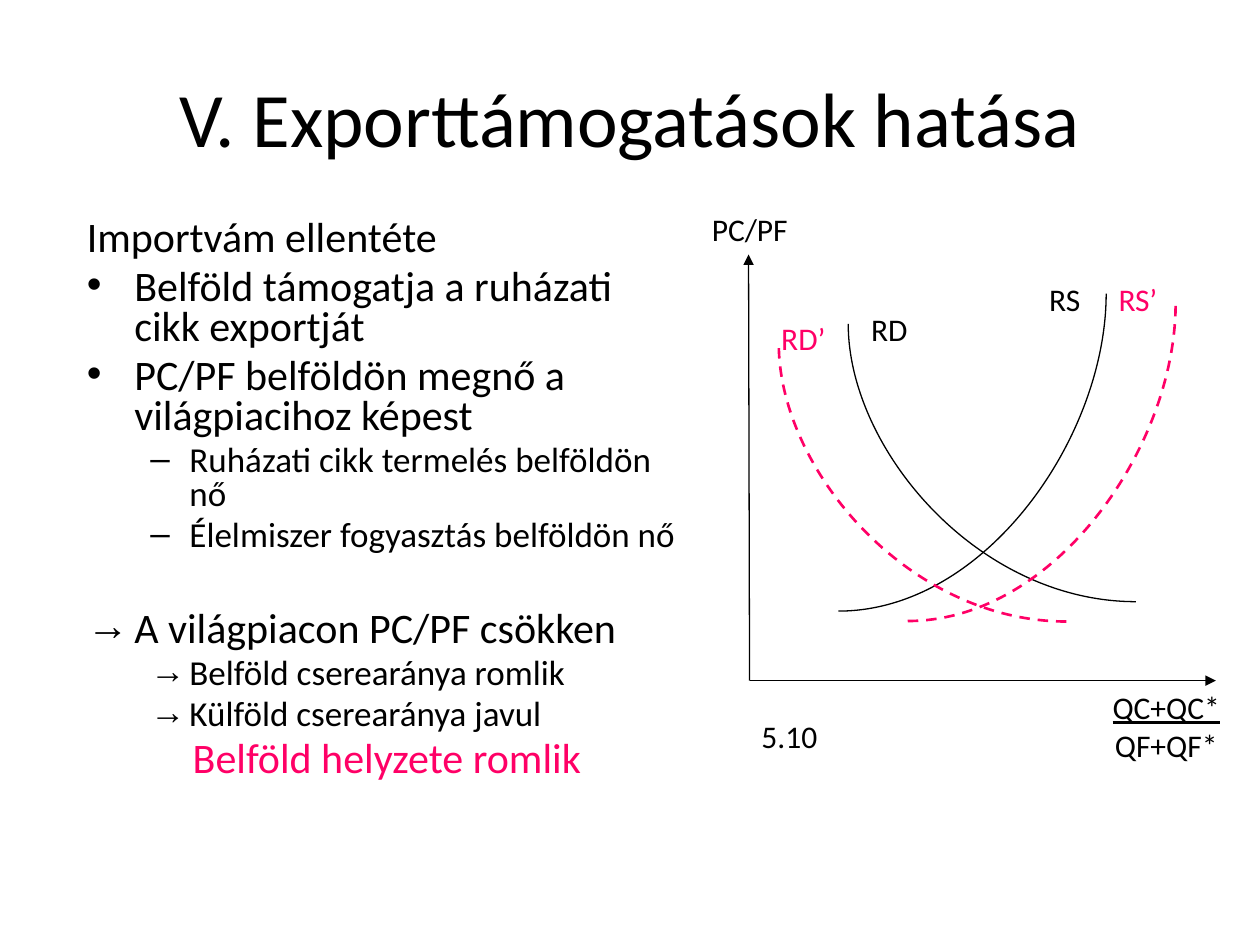
from lxml import etree
from pptx import Presentation
from pptx.dml.color import RGBColor
from pptx.enum.dml import MSO_LINE
from pptx.enum.shapes import MSO_CONNECTOR
from pptx.enum.text import MSO_ANCHOR, MSO_AUTO_SIZE, PP_ALIGN
from pptx.oxml.ns import qn
from pptx.util import Cm, Pt

STRAIGHT = MSO_CONNECTOR.STRAIGHT
DASH = MSO_LINE.DASH
MIDDLE = MSO_ANCHOR.MIDDLE
NO_AUTOFIT = MSO_AUTO_SIZE.NONE
LEFT, CENTER = PP_ALIGN.LEFT, PP_ALIGN.CENTER

FONT = "Calibri"
BLACK, PINK = "000000", "FF0066"
BEND = 0.55  # Bezier handle length for a quarter ellipse

# text, level, bullet, format
BODY = [
    ("Importvám ellentéte", 0, None, {}),
    ("Belföld támogatja a ruházati cikk exportját", 0, "•", {}),
    ("PC/PF belföldön megnő a világpiacihoz képest", 0, "•", {}),
    ("Ruházati cikk termelés belföldön nő", 1, "–", {}),
    ("Élelmiszer fogyasztás belföldön nő", 1, "–", {}),
    ("A világpiacon PC/PF csökken", 0, "→", {"before": 32.6}),
    ("Belföld cserearánya romlik", 1, "→", {}),
    ("Külföld cserearánya javul", 1, "→", {}),
    ("Belföld helyzete romlik", 0, None, {"color": PINK, "align": CENTER}),
]
# size, space before, left margin and hanging indent in cm
LEVELS = [(24, 4.8, 0.96, 0.96), (20, 4.1, 2.07, 0.79)]

# Chart parts, in cm from the corner of the chart box
DEMAND_SIZE, SUPPLY_SIZE = (5.8, 5.6), (5.4, 6.4)
CURVES = [
    (3.0, 2.42, DEMAND_SIZE, True, BLACK),
    (2.8, 1.81, SUPPLY_SIZE, False, BLACK),
    (1.6, 2.82, DEMAND_SIZE, True, PINK),
    (4.2, 2.01, SUPPLY_SIZE, False, PINK),
]
LABELS = [
    ("PC/PF", 0, 0, 2.9, BLACK),
    ("RD", 3.21, 2.01, 2.4, BLACK),
    ("RS", 6.8, 1.42, 2.2, BLACK),
    ("RD’", 1.4, 2.19, 2.4, PINK),
    ("RS’", 8.2, 1.42, 2.2, PINK),
    ("5.10", 1.0, 10.22, 2.4, BLACK),
]


def rgb(value):
    return RGBColor.from_string(value)


def add_text(tf, text, size=18, color=BLACK, align=LEFT, before=0, spacing=1.0,
             underline=False):
    """Fill the first paragraph if it is empty, otherwise add one."""
    p = tf.paragraphs[0]
    if p.runs:
        p = tf.add_paragraph()
    p.alignment = align
    p.space_before = Pt(before)
    p.line_spacing = spacing
    r = p.add_run()
    r.text = text
    r.font.name = FONT
    r.font.size = Pt(size)
    r.font.color.rgb = rgb(color)
    r.font.underline = underline
    return p


def add_box(slide, x, y, w, h):
    tf = slide.shapes.add_textbox(Cm(x), Cm(y), Cm(w), Cm(h)).text_frame
    tf.word_wrap = True
    tf.auto_size = NO_AUTOFIT
    return tf


def set_bullet(p, char, margin, hanging):
    pPr = p._p.get_or_add_pPr()
    pPr.set("marL", str(Cm(margin)))
    pPr.set("indent", str(-Cm(hanging)))
    if char:
        etree.SubElement(pPr, qn("a:buFont")).set("typeface", "Arial")
        etree.SubElement(pPr, qn("a:buChar")).set("char", char)
    else:
        etree.SubElement(pPr, qn("a:buNone"))


def set_title(slide, x, y, w, h):
    sp = slide.shapes.title
    sp.left, sp.top, sp.width, sp.height = Cm(x), Cm(y), Cm(w), Cm(h)
    tf = sp.text_frame
    tf.vertical_anchor = MIDDLE
    tf.auto_size = NO_AUTOFIT
    add_text(tf, "V. Exporttámogatások hatása", size=44, align=CENTER)


def add_body(slide, x, y, w, h):
    tf = add_box(slide, x, y, w, h)
    for text, level, bullet, fmt in BODY:
        size, before, margin, hanging = LEVELS[level]
        p = add_text(tf, text, **{"size": size, "before": before, "spacing": 0.8, **fmt})
        p.level = level
        set_bullet(p, bullet, margin, hanging)


def add_axis(slide, x1, y1, x2, y2):
    line = slide.shapes.add_connector(STRAIGHT, Cm(x1), Cm(y1), Cm(x2), Cm(y2))
    line.line.color.rgb = rgb(BLACK)
    line.line.width = Pt(0.75)
    etree.SubElement(line.line._get_or_add_ln(), qn("a:tailEnd")).set("type", "triangle")
    etree.SubElement(line._element.spPr, qn("a:effectLst"))


def add_curve(slide, x, y, size, falling, color):
    """Draw a quarter ellipse that is flat at its lower end."""
    w, h = size
    low_x, high_x = (x + w, x) if falling else (x, x + w)
    points = [
        (low_x, y + h),
        (low_x + BEND * (high_x - low_x), y + h),
        (high_x, y + BEND * 0.82 * h),
        (high_x, y),
    ]
    start, *rest = [(Cm(px), Cm(py)) for px, py in points]
    builder = slide.shapes.build_freeform(*start)
    builder.add_line_segments(rest, close=False)
    sp = builder.convert_to_shape()
    segments = list(sp._element.iter(qn("a:lnTo")))
    bezier = etree.SubElement(segments[0].getparent(), qn("a:cubicBezTo"))
    for segment in segments:
        bezier.append(segment[0])
        segment.getparent().remove(segment)
    sp.shadow.inherit = False
    sp.fill.background()
    sp.line.color.rgb = rgb(color)
    sp.line.width = Pt(0.75)
    if color == PINK:
        sp.line.width = Pt(1.5)
        sp.line.dash_style = DASH


def add_supply_demand(slide, x, y, w, h):
    origin_x, origin_y = x + 1.01, y + h
    add_axis(slide, origin_x, origin_y, origin_x - 0.02, y + 1.02)
    add_axis(slide, origin_x, origin_y, x + w, origin_y)
    for dx, dy, curve_size, falling, color in CURVES:
        add_curve(slide, x + dx, y + dy, curve_size, falling, color)
    for text, dx, dy, width, color in LABELS:
        add_text(add_box(slide, x + dx, y + dy, width, 1.02), text, color=color)
    tf = add_box(slide, x + 6.81, y + h + 0.02, 5.2, 1.78)
    add_text(tf, "QC+QC*", align=CENTER, underline=True)
    add_text(tf, "QF+QF*", align=CENTER)


def main():
    prs = Presentation()
    prs.slide_width, prs.slide_height = Cm(25.4), Cm(19.05)
    slide = prs.slides.add_slide(prs.slide_layouts[5])
    set_title(slide, 1.27, 0.76, 22.86, 3.18)
    add_body(slide, 1.5, 4.32, 12.6, 12.57)
    add_supply_demand(slide, 14.1, 4.11, 10.41, 9.61)
    prs.save("out.pptx")


if __name__ == "__main__":
    main()
